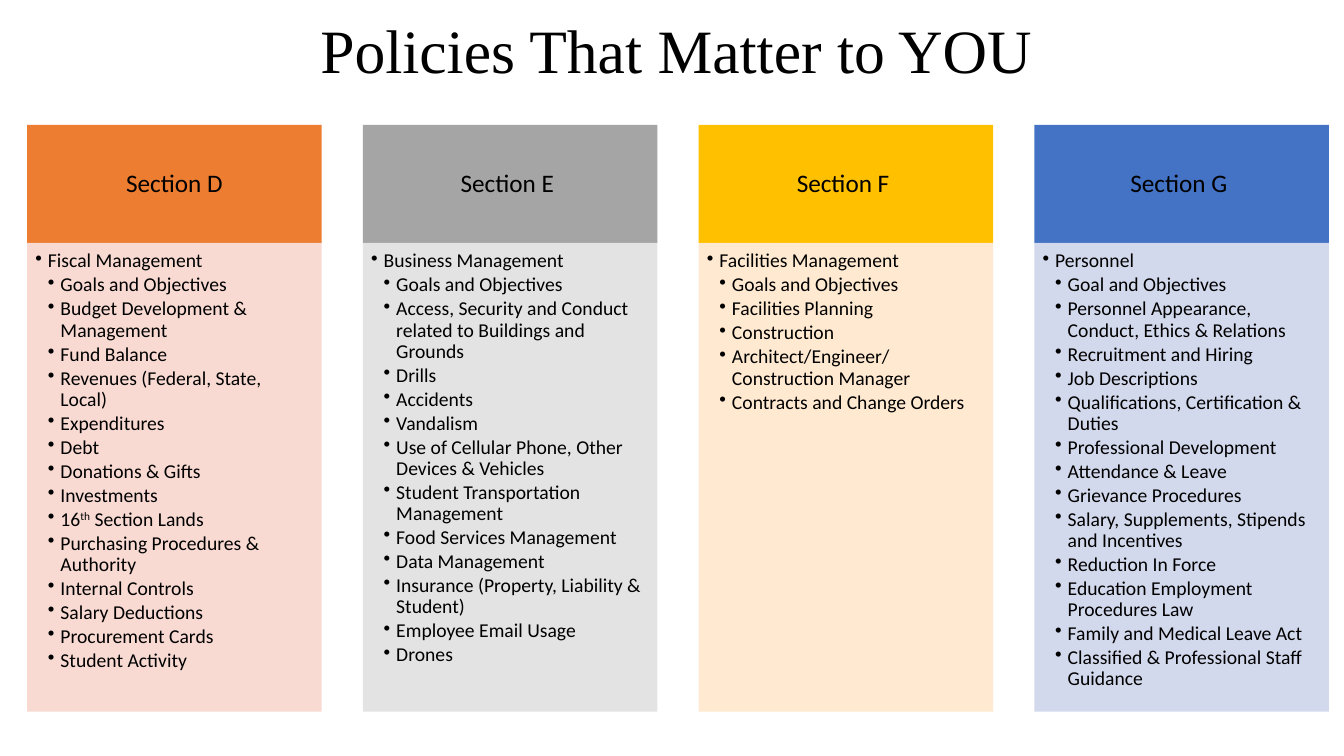
import pptx
import pptx.util
import pptx.dml.color
import pptx.enum.shapes
import pptx.enum.text
import pptx.oxml.ns
import lxml.etree

Inches = pptx.util.Inches
Pt = pptx.util.Pt
ALIGN = pptx.enum.text.PP_ALIGN
ANCHOR = pptx.enum.text.MSO_ANCHOR

COLORS = {
    "text": "000000",
    "orange": "ED7D31", "orange_tint": "F8D7CE",
    "gray": "A5A5A5", "gray_tint": "E1E1E1",
    "gold": "FFC000", "gold_tint": "FFE8CC",
    "blue": "4472C4", "blue_tint": "CFD5EA",
}

SECTIONS = [
    ("Section D", "orange", "Fiscal Management", [
        "Goals and Objectives", "Budget Development & Management", "Fund Balance",
        "Revenues (Federal, State, Local)", "Expenditures", "Debt",
        "Donations & Gifts", "Investments", "16^th^ Section Lands",
        "Purchasing Procedures & Authority", "Internal Controls",
        "Salary Deductions", "Procurement Cards", "Student Activity"]),
    ("Section E ", "gray", "Business Management", [
        "Goals and Objectives",
        "Access, Security and Conduct related to Buildings and Grounds",
        "Drills", "Accidents", "Vandalism",
        "Use of Cellular Phone, Other Devices & Vehicles",
        "Student Transportation Management", "Food Services Management",
        "Data Management", "Insurance (Property, Liability & Student)",
        "Employee Email Usage", "Drones"]),
    ("Section F ", "gold", "Facilities Management", [
        "Goals and Objectives", "Facilities Planning", "Construction",
        "Architect/Engineer/Construction Manager",
        "Contracts and Change Orders"]),
    ("Section G ", "blue", "Personnel", [
        "Goal and Objectives", "Personnel Appearance, Conduct, Ethics & Relations",
        "Recruitment and Hiring", "Job Descriptions",
        "Qualifications, Certification & Duties", "Professional Development",
        "Attendance & Leave", "Grievance Procedures",
        "Salary, Supplements, Stipends and Incentives", "Reduction In Force",
        "Education Employment Procedures Law", "Family and Medical Leave Act",
        "Classified & Professional Staff Guidance"]),
]

COLUMN_LEFT, COLUMN_STEP, COLUMN_WIDTH = 0.27, 3.33, 2.92
HEADER_TOP, HEADER_HEIGHT, BODY_HEIGHT = 1.24, 1.17, 4.65


class SlideBuilder:
    font = "Calibri"

    def __init__(self, slide):
        self.slide = slide

    def color(self, name):
        return pptx.dml.color.RGBColor.from_string(COLORS[name])

    def frame(self, sp, insets, anchor):
        tf = sp.text_frame
        tf.word_wrap = True
        tf.vertical_anchor = anchor
        tf.margin_left, tf.margin_top, tf.margin_right, tf.margin_bottom = map(Inches, insets)
        return tf

    def paragraph(self, p, text, size, align, font=None):
        p.alignment = align
        p.line_spacing = 0.9
        for i, part in enumerate(text.split("^")):
            r = p.add_run()
            r.text = part
            r.font.size = Pt(size)
            r.font.name = font or self.font
            r.font.color.rgb = self.color("text")
            if i % 2:
                r.font._element.set("baseline", "30000")

    def title(self, text, left, top, width, height):
        sp = self.slide.shapes.add_textbox(*map(Inches, (left, top, width, height)))
        tf = self.frame(sp, (0.1, 0.05, 0.1, 0.05), ANCHOR.MIDDLE)
        self.paragraph(tf.paragraphs[0], text, 44, ALIGN.CENTER, "Times New Roman")

    def panel(self, color, left, top, width, height, opacity=100):
        sp = self.slide.shapes.add_shape(
            pptx.enum.shapes.MSO_SHAPE.RECTANGLE, *map(Inches, (left, top, width, height)))
        sp.shadow.inherit = False
        sp.line.fill.background()
        sp.fill.solid()
        sp.fill.fore_color.rgb = self.color(color)
        if opacity < 100:
            clr = sp._element.spPr.find(".//" + pptx.oxml.ns.qn("a:srgbClr"))
            alpha = lxml.etree.SubElement(clr, pptx.oxml.ns.qn("a:alpha"))
            alpha.set("val", str(opacity * 1000))
        return sp

    def header(self, text, color, left):
        sp = self.panel(color, left, HEADER_TOP, COLUMN_WIDTH, HEADER_HEIGHT)
        tf = self.frame(sp, (0.14, 0.08, 0.14, 0.08), ANCHOR.MIDDLE)
        self.paragraph(tf.paragraphs[0], text, 18, ALIGN.CENTER)

    def bullet(self, p, text, level):
        p.level = level
        pPr = p._p.get_or_add_pPr()
        pPr.set("marL", str(Inches(0.125 * level)))
        pPr.set("indent", str(Inches(-0.125)))
        lxml.etree.SubElement(pPr, pptx.oxml.ns.qn("a:buChar")).set("char", "•")
        p.space_after = Pt(2)
        self.paragraph(p, text, 14, ALIGN.LEFT)

    def policy_list(self, topic, policies, color, left):
        sp = self.panel(color, left, HEADER_TOP + HEADER_HEIGHT, COLUMN_WIDTH, BODY_HEIGHT, 90)
        tf = self.frame(sp, (0.08, 0.08, 0.11, 0.12), ANCHOR.TOP)
        self.bullet(tf.paragraphs[0], topic, 1)
        for policy in policies:
            self.bullet(tf.add_paragraph(), policy, 2)


def main():
    prs = pptx.Presentation()
    prs.slide_width = Inches(13.33)
    prs.slide_height = Inches(7.5)
    s = SlideBuilder(prs.slides.add_slide(prs.slide_layouts[6]))
    s.title("Policies That Matter to YOU", 0.44, 0, 12.54, 1.07)
    for i, (name, color, topic, policies) in enumerate(SECTIONS):
        left = COLUMN_LEFT + i * COLUMN_STEP
        s.header(name, color, left)
        s.policy_list(topic, policies, color + "_tint", left)
    prs.save("out.pptx")


if __name__ == "__main__":
    main()
